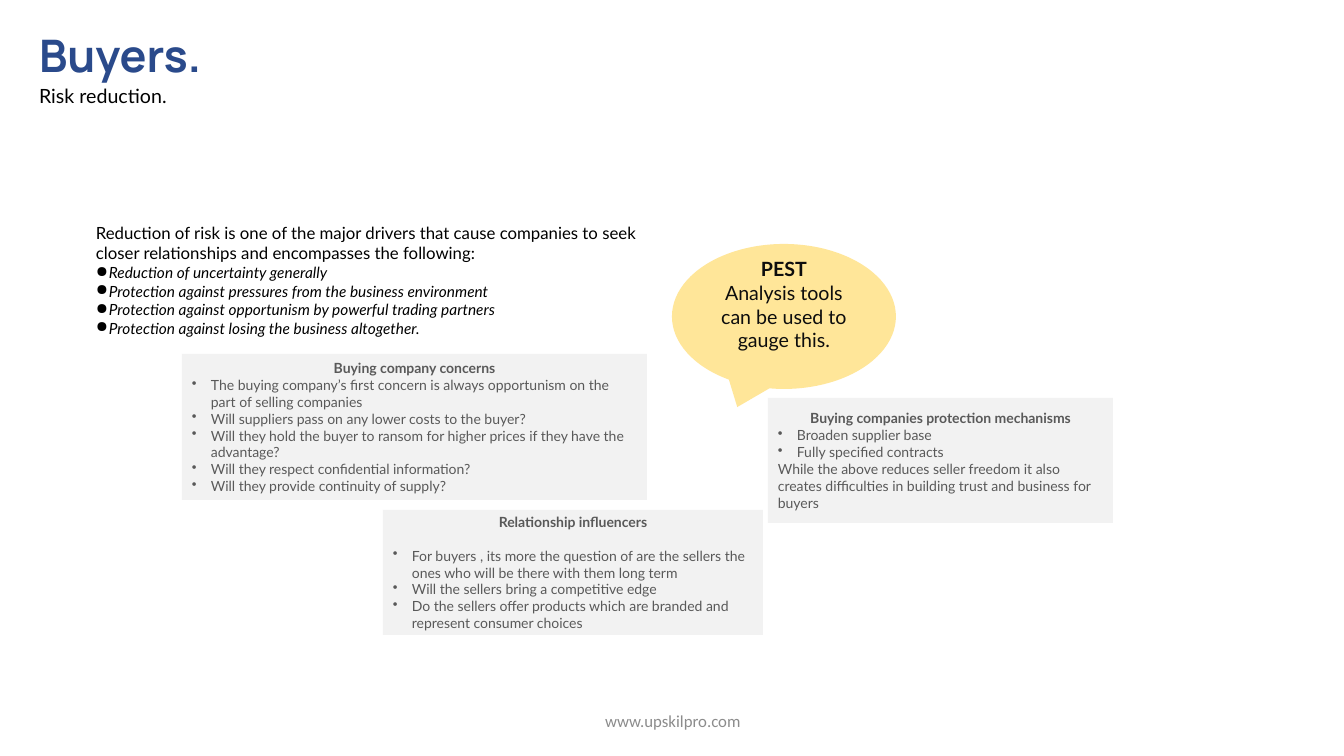
from lxml import etree
from pptx import Presentation, util as u
from pptx.dml.color import RGBColor
from pptx.enum import shapes, text
from pptx.oxml.ns import qn

COLORS = {"blue": "2A4A8B", "black": "000000", "ink": "0D0D0D", "grey": "595959",
          "footer": "8C8C8C", "panel": "F2F2F2", "yellow": "FFE699"}

# Paragraph styles: font name, size, colour, then any extras
STYLES = {
    "title": dict(name="Manrope", size=32, color="blue", bold=True),
    "subtitle": dict(name="Lato", size=14, color="black", bold=False,
                     line_spacing=1.07, space_after=8),
    "intro": dict(name="Lato", size=12, color="black"),
    "risk": dict(name="Lato", size=11, color="black", italic=True, bullet="●", indent=13),
    "callout head": dict(name="Lato", size=14, color="ink", bold=True, center=True),
    "callout": dict(name="Lato", size=14, color="ink", center=True),
    "head": dict(name="Lato", size=10, color="grey", bold=True, center=True),
    "spaced head": dict(name="Lato", size=10, color="grey", bold=True, center=True,
                        space_after=12),
    "point": dict(name="Lato", size=10, color="grey", bullet="•", indent=19),
    "note": dict(name="Lato", size=10, color="grey"),
    "footer": dict(name="Calibri", size=12, color="footer", center=True),
}

# Content: place in px (left, top, width, height), then (style, text) lines
TITLE = ((29, 23, 707, 89), [("title", "Buyers."), ("subtitle", "Risk reduction.")])
FOOTER = ((446, 701, 454, 40), [("footer", "www.upskilpro.com")])
INTRO = ((86, 218, 1199, 226), [
    ("intro", "Reduction of risk is one of the major drivers that cause companies to seek"),
    ("intro", "closer relationships and encompasses the following:"),
    ("risk", "Reduction of uncertainty generally"),
    ("risk", "Protection against pressures from the business environment"),
    ("risk", "Protection against opportunism by powerful trading partners"),
    ("risk", "Protection against losing the business altogether."),
])
CALLOUT = ((672, 244, 224, 145), [
    ("callout head", "PEST"),
    ("callout", "Analysis tools can be used to gauge this."),
])
PANELS = [
    ((182, 354, 465, 146), [
        ("head", "Buying company concerns"),
        ("point", "The buying company’s first concern is always opportunism on the part "
                  "of selling companies"),
        ("point", "Will suppliers pass on any lower costs to the buyer?"),
        ("point", "Will they hold the buyer to ransom for higher prices if they have the "
                  "advantage?"),
        ("point", "Will they respect confidential information?"),
        ("point", "Will they provide continuity of supply?"),
    ]),
    ((768, 398, 345, 125), [
        ("head", "Buying companies protection mechanisms"),
        ("point", "Broaden supplier base"),
        ("point", "Fully specified contracts"),
        ("note", "While the above reduces seller freedom it also creates difficulties in "
                 "building trust and business for buyers"),
    ]),
    ((383, 510, 380, 125), [
        ("spaced head", "Relationship influencers"),
        ("point", "For buyers , its more the question of are the sellers the ones who will "
                  "be there with them long term"),
        ("point", "Will the sellers bring a competitive edge"),
        ("point", "Do the sellers offer products which are branded and represent consumer "
                  "choices"),
    ]),
]


def px(length):
    return round(length * 914400 / 100.8)


def write(box, lines, anchor):
    frame = box.text_frame
    frame.word_wrap = True
    frame.auto_size = text.MSO_AUTO_SIZE.NONE
    frame.vertical_anchor = anchor
    for index, (style_name, words) in enumerate(lines):
        style = STYLES[style_name]
        para = frame.paragraphs[0] if index == 0 else frame.add_paragraph()
        para.alignment = text.PP_ALIGN.CENTER if style.get("center") else text.PP_ALIGN.LEFT
        if "line_spacing" in style:
            para.line_spacing = style["line_spacing"]
        if "space_after" in style:
            para.space_after = u.Pt(style["space_after"])
        if "bullet" in style:
            props = para._p.get_or_add_pPr()
            props.set("marL", str(px(style["indent"])))
            props.set("indent", str(-px(style["indent"])))
            etree.SubElement(props, qn("a:buChar")).set("char", style["bullet"])
        span = para.add_run()
        span.text = words
        span.font.size = u.Pt(style["size"])
        span.font.color.rgb = RGBColor.from_string(COLORS[style["color"]])
        for key in ("name", "bold", "italic"):
            if key in style:
                setattr(span.font, key, style[key])


def add_text(page, place, lines, anchor):
    box = page.shapes.add_textbox(*map(px, place))
    write(box, lines, anchor)


def add_filled(page, preset, place, fill, lines):
    box = page.shapes.add_shape(preset, *map(px, place))
    box.shadow.inherit = False
    box.fill.solid()
    box.fill.fore_color.rgb = RGBColor.from_string(COLORS[fill])
    box.line.fill.background()
    write(box, lines, text.MSO_ANCHOR.MIDDLE)
    return box


def main():
    deck = Presentation()
    deck.slide_width, deck.slide_height = px(1344), px(756)
    page = deck.slides.add_slide(deck.slide_layouts[5])

    # Title and subtitle
    place, lines = TITLE
    title = page.shapes.title
    for side, length in zip(("left", "top", "width", "height"), place):
        setattr(title, side, px(length))
    write(title, lines, text.MSO_ANCHOR.TOP)

    # Footer and introduction
    add_text(page, *FOOTER, text.MSO_ANCHOR.MIDDLE)
    add_text(page, *INTRO, text.MSO_ANCHOR.TOP)

    # Callout, its text raised above the centre
    place, lines = CALLOUT
    callout = add_filled(page, shapes.MSO_SHAPE.OVAL_CALLOUT, place, "yellow", lines)
    callout.text_frame.margin_bottom = px(29)

    # Grey panels
    for place, lines in PANELS:
        add_filled(page, shapes.MSO_SHAPE.RECTANGLE, place, "panel", lines)

    deck.save("out.pptx")


if __name__ == "__main__":
    main()
